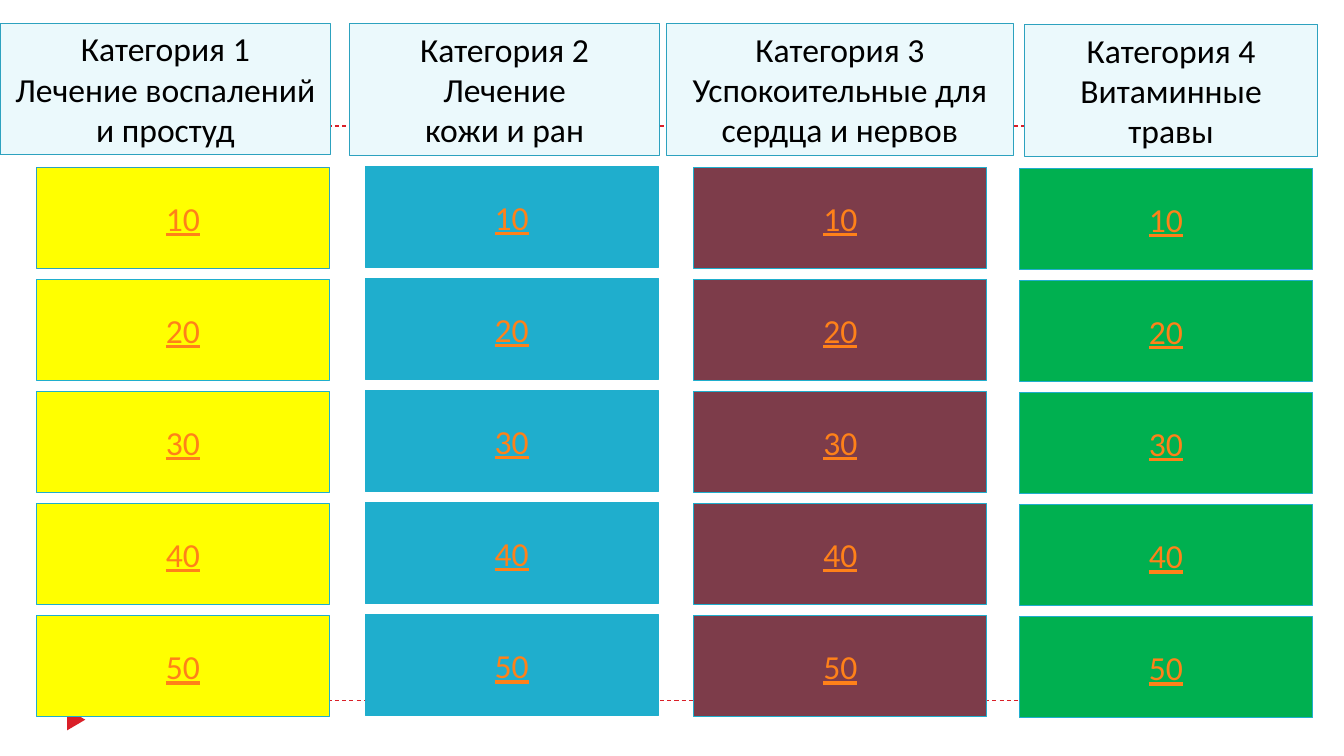
from lxml import etree
from pptx import Presentation
from pptx.dml.color import RGBColor
from pptx.enum.dml import MSO_LINE
from pptx.enum.shapes import MSO_CONNECTOR, MSO_SHAPE
from pptx.enum.text import MSO_ANCHOR, PP_ALIGN
from pptx.oxml.ns import qn
from pptx.util import Inches, Pt

RECT, TRIANGLE = MSO_SHAPE.RECTANGLE, MSO_SHAPE.ISOSCELES_TRIANGLE
STRAIGHT, DASH = MSO_CONNECTOR.STRAIGHT, MSO_LINE.DASH
MIDDLE, CENTER = MSO_ANCHOR.MIDDLE, PP_ALIGN.CENTER

COLORS = {
    "accent": "DA1F28", "header": "EBF9FC", "header_line": "2DA2BF",
    "text": "000000", "score": "FF8119", "score_line": "1FAECD",
    "yellow": "FFFF00", "blue": "1FAECD", "wine": "7D3C4A", "green": "00B050",
}
FONT = {"name": "Calibri", "size": Pt(24)}
FRAME = {"word_wrap": True, "vertical_anchor": MIDDLE,
         "margin_left": Inches(0.11), "margin_right": Inches(0.11)}

# Places are percentages of the slide's width and height.
CATEGORIES = [
    {"lines": ["Категория 1", "Лечение воспалений и простуд"],
     "header": (0, 3.07, 24.61, 17.33), "left": 2.7, "top": 22.13, "fill": "yellow"},
    {"lines": ["Категория 2", "Лечение", "кожи и ран"],
     "header": (26.03, 3.07, 23.03, 17.47), "left": 27.16, "top": 22, "fill": "blue"},
    {"lines": ["Категория 3", "Успокоительные для сердца и нервов"],
     "header": (49.59, 3.07, 25.81, 17.47), "left": 51.61, "top": 22.13, "fill": "wine"},
    {"lines": ["Категория 4", "Витаминные травы"],
     "header": (76.22, 3.2, 21.83, 17.47), "left": 75.84, "top": 22.27, "fill": "green"},
]
SCORES = [10, 20, 30, 40, 50]
SCORE_WIDTH, SCORE_HEIGHT, ROW_STEP = 21.83, 13.33, 14.83


def rgb(name):
    return RGBColor.from_string(COLORS[name])


class Board:
    def __init__(self, prs):
        self.width, self.height = prs.slide_width, prs.slide_height
        self.slide = prs.slides.add_slide(prs.slide_layouts[6])

    def scale(self, *shares):
        """Turn alternating x and y percentages into slide lengths."""
        sides = (self.width, self.height)
        return [round(sides[i % 2] * share / 100) for i, share in enumerate(shares)]

    def rule(self, y):
        line = self.slide.shapes.add_connector(STRAIGHT, *self.scale(5.03, y, 95.05, y))
        line.line.color.rgb = rgb("accent")
        line.line.width = Pt(0.75)
        line.line.dash_style = DASH
        etree.SubElement(line.element.spPr, qn("a:effectLst"))

    def shape(self, kind, place, fill, outline=None):
        sp = self.slide.shapes.add_shape(kind, *self.scale(*place))
        sp.shadow.inherit = False
        sp.fill.solid()
        sp.fill.fore_color.rgb = rgb(fill)
        if outline:
            sp.line.color.rgb = rgb(outline)
            sp.line.width = Pt(0.75)
        else:
            sp.line.fill.background()
        return sp

    def marker(self, place):
        self.shape(TRIANGLE, place, "accent").rotation = 90

    def card(self, place, lines, fill, outline, color, underline=False):
        tf = self.shape(RECT, place, fill, outline).text_frame
        for name, value in FRAME.items():
            setattr(tf, name, value)
        tf.text = "\n".join(lines)
        for p in tf.paragraphs:
            p.alignment = CENTER
            for r in p.runs:
                for name, value in {**FONT, "underline": underline}.items():
                    setattr(r.font, name, value)
                r.font.color.rgb = rgb(color)


def main():
    prs = Presentation()
    prs.slide_width, prs.slide_height = Inches(13.33), Inches(7.5)
    board = Board(prs)
    for y in (92.67, 16.67):
        board.rule(y)
    board.marker((4.88, 94, 1.58, 2.4))
    for column, category in enumerate(CATEGORIES):
        board.card(category["header"], category["lines"], "header", "header_line", "text")
        for row, score in enumerate(SCORES):
            place = (category["left"], category["top"] + row * ROW_STEP,
                     SCORE_WIDTH, SCORE_HEIGHT)
            outline = "header_line" if column == row == 0 else "score_line"
            board.card(place, [str(score)], category["fill"], outline, "score", True)
    prs.save("out.pptx")


if __name__ == "__main__":
    main()
